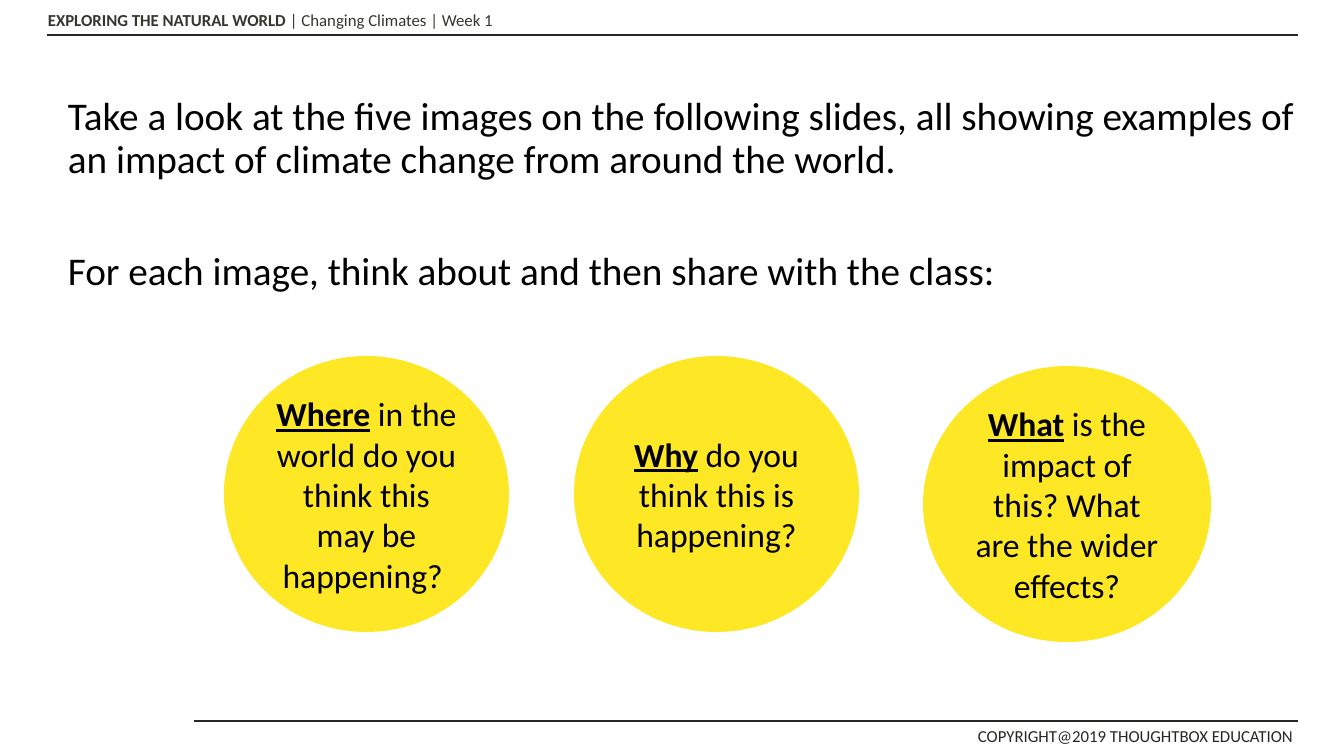
from lxml import etree
from pptx import Presentation
from pptx import util as u
from pptx.dml.color import RGBColor
from pptx.enum import shapes, text
from pptx.oxml.ns import qn

FONT = "Calibri"
COLOURS = {"rule": "252823", "header": "35372F", "ink": "000000", "circle": "FEE725"}

# Each run is (words, bold, underlined)
HEADER = [("EXPLORING THE NATURAL WORLD ", True, False),
          ("| Changing Climates | Week 1", False, False)]
COPYRIGHT = [("COPYRIGHT@2019 THOUGHTBOX EDUCATION", False, False)]
INTRO = [
    "Take a look at the five images on the following slides, all showing examples of "
    "an impact of climate change from around the world.",
    "For each image, think about and then share with the class:",
]
# (left, top, width), key word, rest of the question
QUESTIONS = [
    ((224, 356, 285), "Where", " in the world do you think this may be happening? "),
    ((574, 356, 285), "Why", " do you think this is happening?"),
    ((923, 366, 288), "What", " is the impact of this? What are the wider effects?"),
]
CIRCLE_HEIGHT = 276
RULES_RIGHT = 1298
RULES = [(47, 35), (194, 721)]  # left, height on the page


def px(length):
    return u.Emu(round(length * 914400 / 100.8))


def colour(name):
    return RGBColor.from_string(COLOURS[name])


def add_runs(para, runs, size, ink):
    for words, bold, underlined in runs:
        span = para.add_run()
        span.text = words
        span.font.name = FONT
        span.font.size = u.Pt(size)
        span.font.bold = bold
        span.font.underline = underlined
        span.font.color.rgb = colour(ink)


def add_text_box(page, left, top, width, height, wrap=True):
    box = page.shapes.add_textbox(px(left), px(top), px(width), px(height))
    box.text_frame.word_wrap = wrap
    return box.text_frame


def add_rule(page, left, y):
    rule = page.shapes.add_connector(shapes.MSO_CONNECTOR.STRAIGHT,
                                     px(left), px(y), px(RULES_RIGHT), px(y))
    rule.line.color.rgb = colour("rule")
    rule.line.width = u.Pt(1)
    etree.SubElement(rule._element.spPr, qn("a:effectLst"))


def add_question(page, place, key_word, rest):
    left, top, width = place
    circle = page.shapes.add_shape(shapes.MSO_SHAPE.OVAL, px(left), px(top),
                                   px(width), px(CIRCLE_HEIGHT))
    circle.shadow.inherit = False
    circle.fill.solid()
    circle.fill.fore_color.rgb = colour("circle")
    circle.line.fill.background()
    frame = circle.text_frame
    frame.word_wrap = True
    frame.vertical_anchor = text.MSO_ANCHOR.MIDDLE
    para = frame.paragraphs[0]
    para.alignment = text.PP_ALIGN.CENTER
    add_runs(para, [(key_word, True, True), (rest, False, False)], 24, "ink")


def main():
    deck = Presentation()
    deck.slide_width, deck.slide_height = px(1344), px(756)
    page = deck.slides.add_slide(deck.slide_layouts[6])

    for left, y in RULES:
        add_rule(page, left, y)
    header = add_text_box(page, 38, 5, 481, 30, wrap=False)
    add_runs(header.paragraphs[0], HEADER, 12, "header")
    footer = add_text_box(page, 968, 721, 343, 31)
    add_runs(footer.paragraphs[0], COPYRIGHT, 12, "rule")

    intro = add_text_box(page, 58, 92, 1250, 220)
    for index, sentence in enumerate(INTRO):
        para = intro.add_paragraph() if index else intro.paragraphs[0]
        para.line_spacing = 0.9
        if index:
            para.space_before = u.Pt(50)
        add_runs(para, [(sentence, False, False)], 28, "ink")

    for question in QUESTIONS:
        add_question(page, *question)
    deck.save("out.pptx")


if __name__ == "__main__":
    main()
